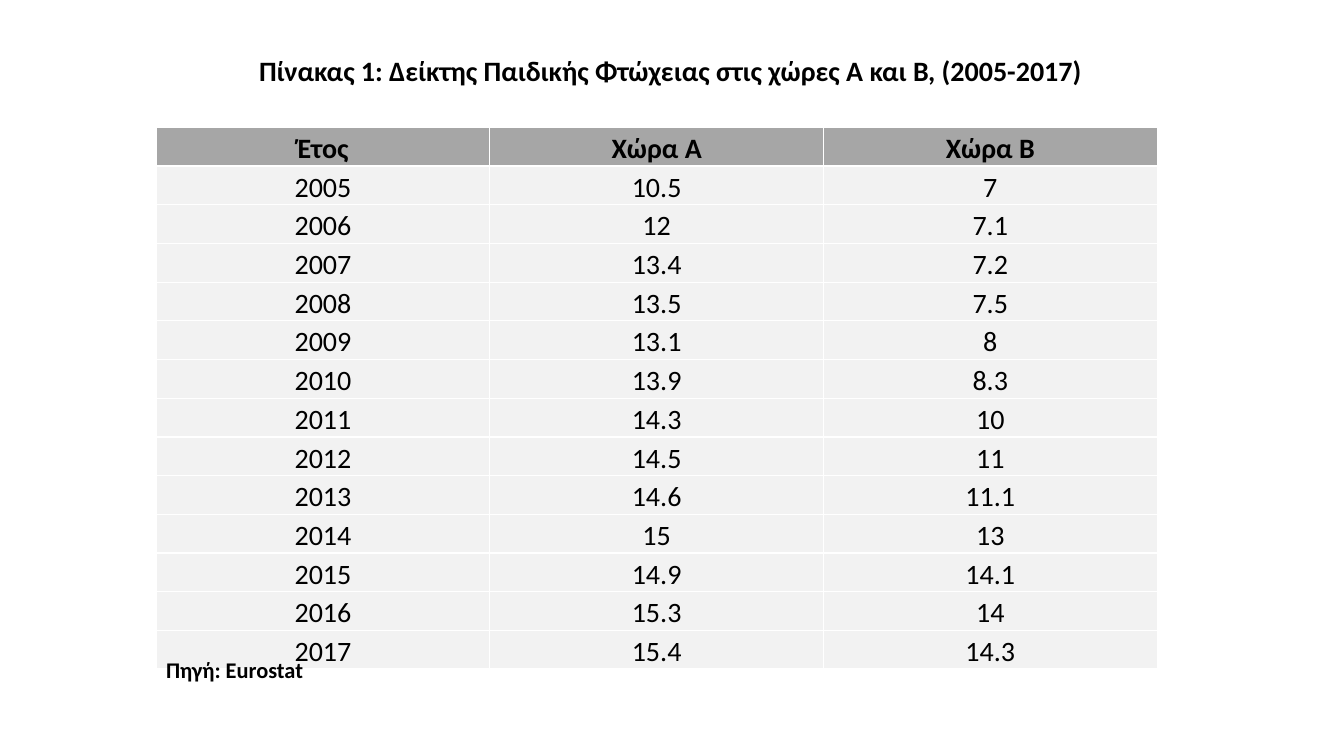
from lxml import etree
from pptx import Presentation
from pptx.dml.color import RGBColor
from pptx.enum import text
from pptx.oxml import ns
from pptx.util import Pt

HEADER = ("Έτος", "Χώρα Α", "Χώρα Β")
POVERTY = (
    (2005, 10.5, 7), (2006, 12, 7.1), (2007, 13.4, 7.2), (2008, 13.5, 7.5),
    (2009, 13.1, 8), (2010, 13.9, 8.3), (2011, 14.3, 10), (2012, 14.5, 11),
    (2013, 14.6, 11.1), (2014, 15, 13), (2015, 14.9, 14.1), (2016, 15.3, 14),
    (2017, 15.4, 14.3),
)


def color(value):
    return RGBColor.from_string(value)


def style(p, size, bold):
    p.font.name = "Calibri"
    p.font.size = Pt(size)
    p.font.bold = bold
    p.font.color.rgb = color("000000")


def add_borders(cell, value):
    tcPr = cell._tc.get_or_add_tcPr()
    for side in ("a:lnL", "a:lnR", "a:lnT", "a:lnB"):
        ln = etree.SubElement(tcPr, ns.qn(side), w=str(Pt(1)))
        fill = etree.SubElement(ln, ns.qn("a:solidFill"))
        etree.SubElement(fill, ns.qn("a:srgbClr"), val=value)


def add_label(s, x, y, w, h, label, size):
    tf = s.shapes.add_textbox(Pt(x), Pt(y), Pt(w), Pt(h)).text_frame
    tf.word_wrap = False
    tf.auto_size = text.MSO_AUTO_SIZE.SHAPE_TO_FIT_TEXT
    p = tf.paragraphs[0]
    p.text = label
    style(p, size, True)


def fill_cell(cell, value, header):
    add_borders(cell, "FFFFFF")
    cell.fill.solid()
    cell.fill.fore_color.rgb = color("A6A6A6" if header else "F2F2F2")
    cell.vertical_anchor = text.MSO_ANCHOR.BOTTOM
    cell.margin_left = cell.margin_right = cell.margin_top = Pt(0.7)
    cell.margin_bottom = 0
    p = cell.text_frame.paragraphs[0]
    p.text = str(value)
    p.alignment = text.PP_ALIGN.CENTER
    p.line_spacing = 1.1
    p.space_after = Pt(3)
    style(p, 20, header)


def add_poverty_table(s, x, y, w, h):
    rows = (HEADER,) + POVERTY
    table = s.shapes.add_table(
        len(rows), len(HEADER), Pt(x), Pt(y), Pt(w), Pt(h)).table
    for column in table.columns:
        column.width = Pt(w / len(HEADER))
    for i, values in enumerate(rows):
        table.rows[i].height = Pt(h / len(rows))
        for j, value in enumerate(values):
            fill_cell(table.cell(i, j), value, i == 0)


def main():
    prs = Presentation()
    prs.slide_width, prs.slide_height = Pt(960), Pt(540)
    s = prs.slides.add_slide(prs.slide_layouts[6])
    add_poverty_table(s, 111.6, 91, 715, 364)
    add_label(s, 178, 34.6, 607, 31.5,
              "Πίνακας 1: Δείκτης Παιδικής Φτώχειας στις χώρες Α και Β, (2005-2017)", 20)
    add_label(s, 111.6, 465, 114, 26.6, "Πηγή: Eurostat", 16)
    prs.save("out.pptx")


if __name__ == "__main__":
    main()
